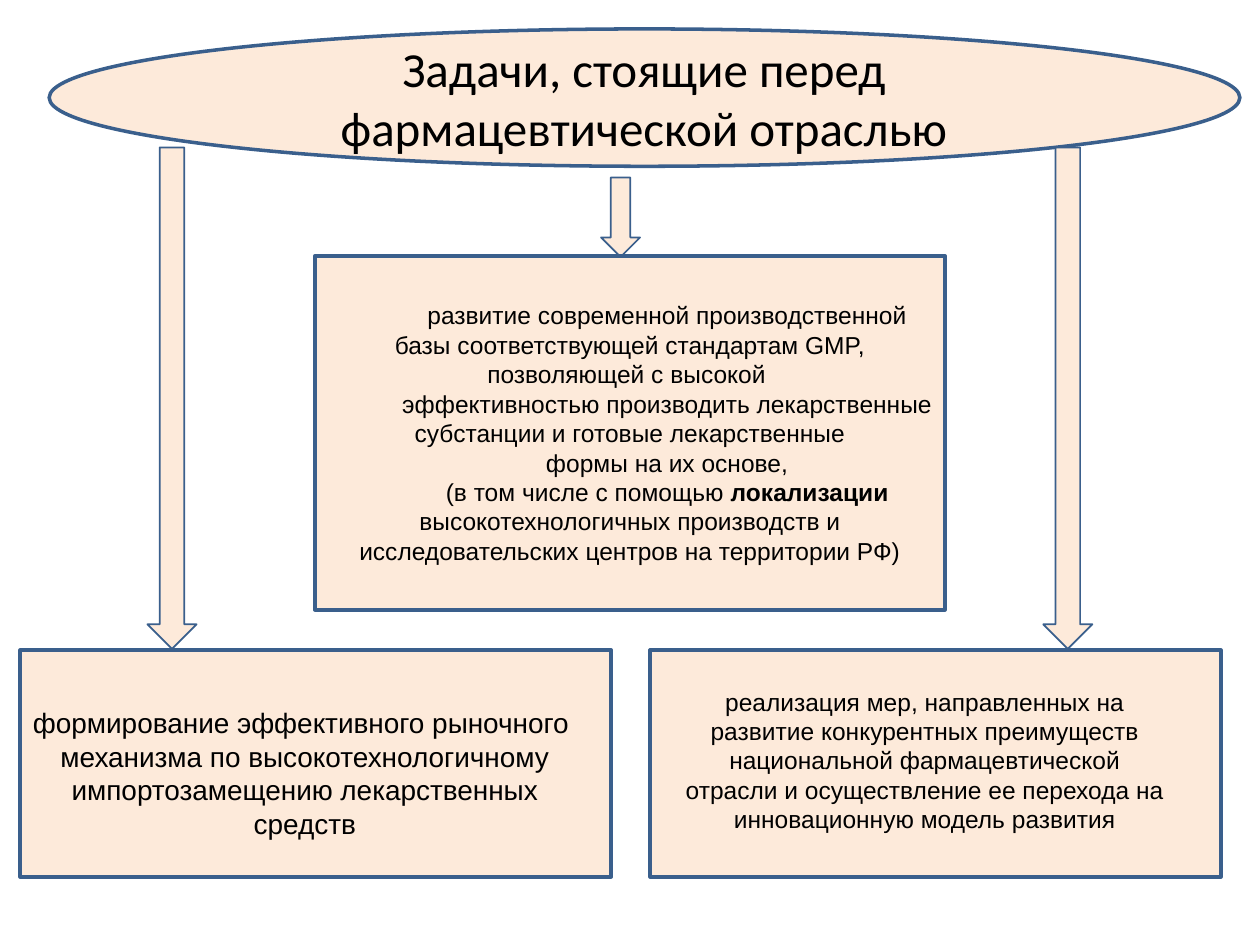
from pptx import Presentation
from pptx.dml.color import RGBColor
from pptx.enum.shapes import MSO_SHAPE
from pptx.enum.text import MSO_ANCHOR, MSO_AUTO_SIZE, PP_ALIGN
from pptx.util import Inches, Pt

PEACH, BLUE, BLACK = "FDEADA", "3A5F8C", "000000"


def add_block(preset, box, line_width):
    block = slide.shapes.add_shape(preset, *map(Inches, box))
    block.shadow.inherit = False
    block.fill.solid()
    block.fill.fore_color.rgb = RGBColor.from_string(PEACH)
    block.line.color.rgb = RGBColor.from_string(BLUE)
    block.line.width = Pt(line_width)
    return block


def write(frame, paragraphs, size, font_name="Arial", first_indent=0):
    """Fill a frame; each paragraph is a list of (text, bold) runs."""
    frame.word_wrap = True
    for number, runs in enumerate(paragraphs):
        paragraph = frame.paragraphs[0] if number == 0 else frame.add_paragraph()
        paragraph.alignment = PP_ALIGN.CENTER
        if first_indent:
            properties = paragraph._p.get_or_add_pPr()
            properties.set("marL", "0")
            properties.set("indent", str(Inches(first_indent)))
        for text, bold in runs:
            run = paragraph.add_run()
            run.text = text
            font_format = {"name": font_name, "size": Pt(size), "bold": bold}
            for attribute, value in font_format.items():
                setattr(run.font, attribute, value)
            run.font.color.rgb = RGBColor.from_string(BLACK)


prs = Presentation()
prs.slide_width, prs.slide_height = Inches(10), Inches(7.5)
slide = prs.slides.add_slide(prs.slide_layouts[5])

# Heading: ellipse with the title inside it
add_block(MSO_SHAPE.OVAL, (0.39, 0.23, 9.45, 1.09), 2)
title = slide.shapes.title
title_place = {"left": 1.77, "top": 0.23, "width": 6.68, "height": 1.09}
for attribute, value in title_place.items():
    setattr(title, attribute, Inches(value))
title.text_frame.vertical_anchor = MSO_ANCHOR.MIDDLE
title.text_frame.auto_size = MSO_AUTO_SIZE.NONE
write(title.text_frame,
      [[("Задачи, стоящие перед фармацевтической отраслью", False)]],
      28, "Calibri")
slide.shapes._spTree.append(title._element)  # title above the ellipse

# Arrows from the heading to the three tasks
for arrow_box in [(4.77, 1.41, 0.31, 0.63),
                  (1.17, 1.17, 0.39, 3.98),
                  (8.28, 1.17, 0.39, 3.98)]:
    add_block(MSO_SHAPE.DOWN_ARROW, arrow_box, 1)

# Middle task: modern production base
production = add_block(MSO_SHAPE.RECTANGLE, (2.5, 2.03, 5, 2.81), 2)
production.text_frame.vertical_anchor = MSO_ANCHOR.MIDDLE
write(production.text_frame, [
    [("развитие современной производственной базы соответствующей "
      "стандартам GMP, позволяющей с высокой ", False)],
    [("эффективностью производить лекарственные субстанции и готовые "
      "лекарственные", False)],
    [(" формы на их основе, ", False)],
    [("(в том числе с помощью", False), (" локализации ", True),
     ("высокотехнологичных производств и исследовательских центров на "
      "территории РФ)", False)],
], 14, first_indent=0.59)

# Lower tasks: frame, text area, text size, paragraphs
lower_tasks = [
    ((0.16, 5.16, 4.69, 1.8), (0, 5.55, 4.84, 1.18), 16,
     ["формирование эффективного рыночного ",
      "механизма по высокотехнологичному",
      "импортозамещению лекарственных",
      "средств"]),
    ((5.16, 5.16, 4.53, 1.8), (5.31, 5.4, 4.06, 1.28), 14,
     ["реализация мер, направленных на развитие конкурентных преимуществ "
      "национальной фармацевтической отрасли и осуществление ее перехода на "
      "инновационную модель развития"]),
]
for frame_box, text_box, size, lines in lower_tasks:
    add_block(MSO_SHAPE.RECTANGLE, frame_box, 2)
    task = slide.shapes.add_textbox(*map(Inches, text_box))
    task.text_frame.auto_size = MSO_AUTO_SIZE.SHAPE_TO_FIT_TEXT
    write(task.text_frame, [[(line, False)] for line in lines], size)

prs.save("out.pptx")
